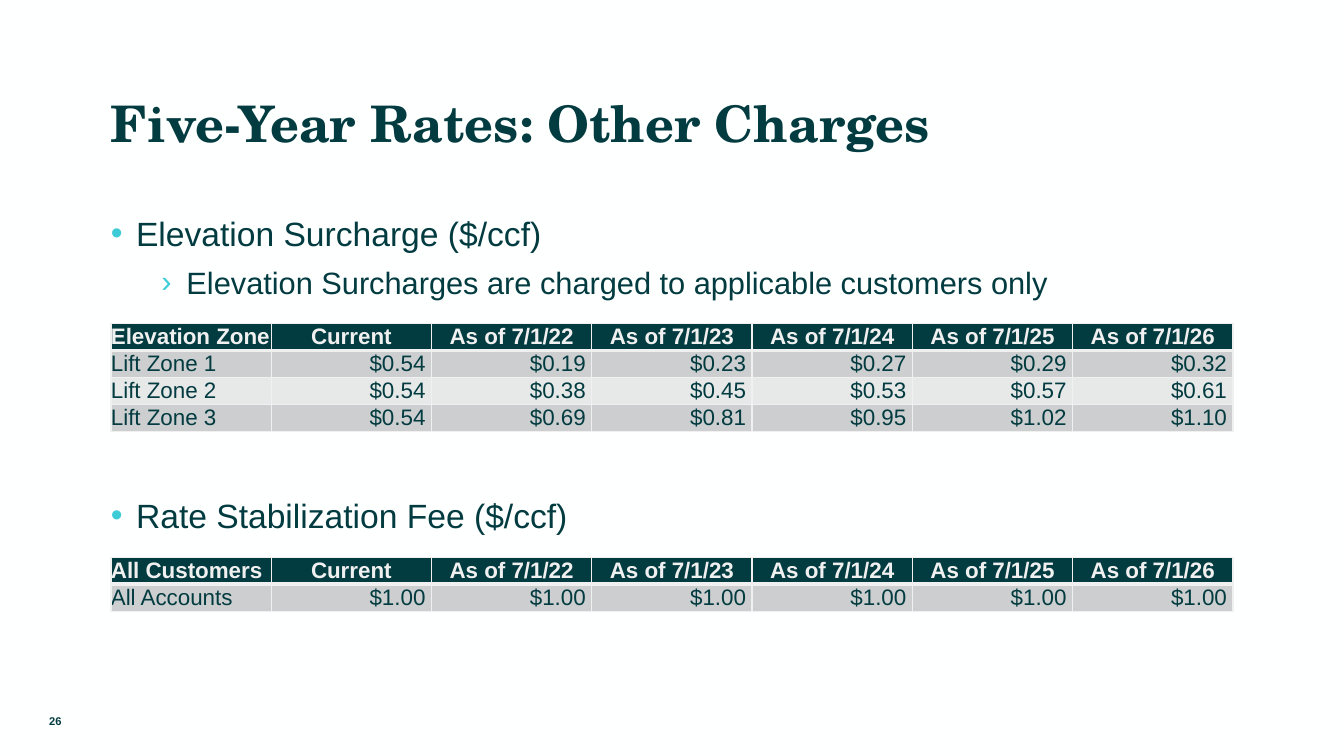
from pptx import Presentation
from pptx import util as u
from pptx.dml import color
from pptx.enum import text
from pptx.oxml import ns
from lxml import etree

WIDE, HIGH = 13.33, 7.5
LEFT, SPAN = 1.1, 11.13
DARK, PALE, AQUA = "023B40", "F0F0F0", "3DCCD5"
BANDS = "CCCECF", "E7E8E8"
DATES = ["Current"] + [f"As of 7/1/{year}" for year in range(22, 27)]
ZONES = [
    ["Elevation Zone"] + DATES,
    ["Lift Zone 1", "$0.54", "$0.19", "$0.23", "$0.27", "$0.29", "$0.32"],
    ["Lift Zone 2", "$0.54", "$0.38", "$0.45", "$0.53", "$0.57", "$0.61"],
    ["Lift Zone 3", "$0.54", "$0.69", "$0.81", "$0.95", "$1.02", "$1.10"],
]
FEES = [["All Customers"] + DATES, ["All Accounts"] + ["$1.00"] * 6]
ALIGN = text.PP_ALIGN


def rgb(code):
    return color.RGBColor.from_string(code)


def paint(fill, code):
    fill.solid()
    fill.fore_color.rgb = rgb(code)


def style(para, size, code=DARK, bold=False, face="Arial", align=ALIGN.LEFT):
    font = para.font
    font.size, font.bold, font.name = u.Pt(size), bold, face
    font.color.rgb = rgb(code)
    para.alignment = align


def frame(slide, box, anchor, top=0):
    area = slide.shapes.add_textbox(*map(u.Inches, box)).text_frame
    area.word_wrap = True
    area.vertical_anchor = anchor
    area.margin_left = area.margin_right = area.margin_bottom = 0
    area.margin_top = u.Inches(top)
    return area


def title(slide, box, words):
    para = frame(slide, box, text.MSO_ANCHOR.BOTTOM, 0.21).paragraphs[0]
    para.text = words
    style(para, 36, bold=True, face="TeX Gyre Schola")


def number(slide, box, words):
    para = frame(slide, box, text.MSO_ANCHOR.MIDDLE).paragraphs[0]
    para.text = words
    style(para, 8, bold=True, align=ALIGN.CENTER)


def bullet(para, mark, indent):
    props = para._p.get_or_add_pPr()
    props.set("marL", str(u.Inches(indent)))
    props.set("indent", str(u.Inches(-0.25)))
    tint = etree.SubElement(props, ns.qn("a:buClr"))
    etree.SubElement(tint, ns.qn("a:srgbClr"), val=AQUA)
    etree.SubElement(props, ns.qn("a:buFont"), typeface="Arial")
    etree.SubElement(props, ns.qn("a:buChar"), char=mark)
    props.append(props.find(ns.qn("a:defRPr")))


def points(slide, box, lines):
    area = frame(slide, box, text.MSO_ANCHOR.TOP)
    looks = [(24, 10, "•", 0.25), (22, 5, "›", 0.75)]
    for level, words in enumerate(lines):
        para = area.add_paragraph() if level else area.paragraphs[0]
        size, gap, mark, indent = looks[level]
        para.text, para.level = words, level
        para.line_spacing, para.space_before = 1.1, u.Pt(gap)
        style(para, size)
        bullet(para, mark, indent)


def border(cell, base):
    props = cell._tc.get_or_add_tcPr()
    widths = {"lnL": 1, "lnR": 1, "lnT": 1, "lnB": base}
    for place, (side, width) in enumerate(widths.items()):
        line = etree.Element(ns.qn(f"a:{side}"), w=str(u.Pt(width)))
        fill = etree.SubElement(line, ns.qn("a:solidFill"))
        etree.SubElement(fill, ns.qn("a:srgbClr"), val=PALE)
        props.insert(place, line)


def rates(slide, box, data):
    count = len(data[0])
    table = slide.shapes.add_table(len(data), count, *map(u.Inches, box)).table
    for col in table.columns:
        col.width = u.Inches(box[2] / count)
    for row, values in enumerate(data):
        table.rows[row].height = u.Inches(0.22)
        head = row == 0
        for col, words in enumerate(values):
            cell = table.cell(row, col)
            cell.text = words
            cell.vertical_anchor = text.MSO_ANCHOR.MIDDLE
            cell.margin_left = cell.margin_top = cell.margin_bottom = 0
            cell.margin_right = 0 if head or col == 0 else u.Inches(0.06)
            side = ALIGN.CENTER if head else ALIGN.RIGHT
            style(cell.text_frame.paragraphs[0], 16, PALE if head else DARK,
                  head, align=side if col else ALIGN.LEFT)
            paint(cell.fill, DARK if head else BANDS[(row - 1) % 2])
            border(cell, 3 if head else 1)


def main():
    deck = Presentation()
    deck.slide_width, deck.slide_height = u.Inches(WIDE), u.Inches(HIGH)
    slide = deck.slides.add_slide(deck.slide_layouts[6])
    paint(slide.background.fill, "FEFFFF")
    title(slide, (LEFT, 0.64, SPAN, 0.87), "Five-Year Rates: Other Charges")
    points(slide, (LEFT, 2.07, SPAN, 1.33), [
        "Elevation Surcharge ($/ccf)",
        "Elevation Surcharges are charged to applicable customers only",
    ])
    rates(slide, (LEFT, 3.21, SPAN, 1.07), ZONES)
    points(slide, (LEFT, 4.87, SPAN, 1.33), ["Rate Stabilization Fee ($/ccf)"])
    rates(slide, (LEFT, 5.53, SPAN, 0.53), FEES)
    number(slide, (0, 6.95, LEFT, 0.4), "26")
    deck.save("out.pptx")


if __name__ == "__main__":
    main()
